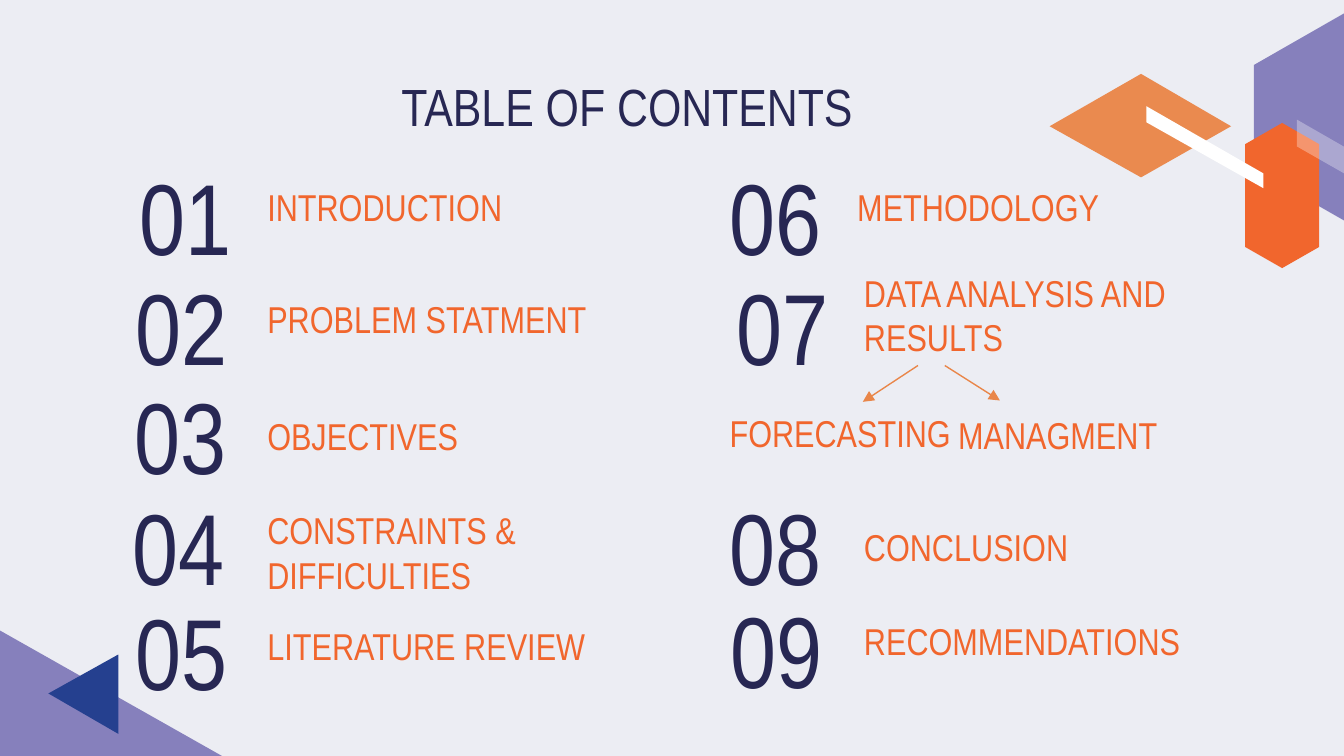
"""Build the table of contents slide with its numbered topics and corner shapes."""
from dataclasses import dataclass

from lxml import etree
from pptx import Presentation
from pptx.dml.color import RGBColor
from pptx.enum.shapes import MSO_CONNECTOR, MSO_SHAPE
from pptx.enum.text import MSO_ANCHOR, MSO_AUTO_SIZE, PP_ALIGN
from pptx.oxml.ns import qn
from pptx.util import Inches, Pt

HEX = MSO_SHAPE.HEXAGON
LINE = MSO_CONNECTOR.STRAIGHT
TOP, MID = MSO_ANCHOR.TOP, MSO_ANCHOR.MIDDLE
LEFT, MIDST = PP_ALIGN.LEFT, PP_ALIGN.CENTER
FIXED = MSO_AUTO_SIZE.NONE
FONT = "Arial Narrow"
COLORS = {
    "paper": "ECEDF3", "navy": "272753", "orange": "F1662D", "peach": "EA8A4F",
    "arrow": "E98649", "violet": "8680BC", "blue": "25408F", "white": "FFFFFF",
}


@dataclass
class Label:
    text: str
    x: float
    y: float
    tall: float = 0.32


@dataclass
class Patch:
    points: list[tuple[float, float]]
    color: str
    alpha: int = 100


@dataclass
class Block:
    x: float
    y: float
    wide: float
    tall: float
    color: str


@dataclass
class Arrow:
    x: float
    y: float
    to_x: float
    to_y: float


NUMBERS = [
    Label("01", 0.94, 1.09), Label("02", 0.91, 1.91), Label("03", 0.9, 2.72),
    Label("04", 0.89, 3.55), Label("05", 0.91, 4.33), Label("06", 5.33, 1.09),
    Label("07", 5.38, 1.91), Label("08", 5.33, 3.55), Label("09", 5.34, 4.31),
]
TOPICS = [
    Label("INTRODUCTION", 1.89, 1.38),
    Label("PROBLEM STATMENT", 1.89, 2.21),
    Label("OBJECTIVES", 1.89, 3.08),
    Label("CONSTRAINTS & DIFFICULTIES", 1.89, 3.79, 0.63),
    Label("LITERATURE REVIEW", 1.89, 4.64),
    Label("METHODOLOGY", 6.28, 1.38),
    Label("DATA ANALYSIS AND RESULTS", 6.33, 2.18),
    Label("FORECASTING", 5.33, 3.06),
    Label("MANAGMENT", 7.03, 3.07),
    Label("CONCLUSION", 6.33, 3.91),
    Label("RECOMMENDATIONS", 6.33, 4.61),
]
DECOR = [
    Block(9.23, 0.2, 1.54, 1.34, "violet"),
    Patch([(8.49, 0.55), (9.16, 0.94), (8.49, 1.32), (7.81, 0.94)], "peach"),
    Patch([(-0.02, 4.68), (-1.69, 5.63), (-0.02, 6.59), (1.66, 5.63)], "violet"),
    Patch([(0.88, 4.87), (0.36, 5.16), (0.88, 5.46)], "blue"),
    Block(9, 1.18, 1.08, 0.55, "orange"),
    Patch([(9.4, 1.29), (8.53, 0.79), (8.53, 0.91), (9.4, 1.4)], "white"),
    Patch([(11.13, 1.74), (9.65, 0.89), (9.65, 1.09), (11.14, 1.94)], "white", 31),
]
ARROWS = [Arrow(6.83, 2.72, 6.42, 2.99), Arrow(7.03, 2.72, 7.44, 2.98)]


def tint(name: str) -> RGBColor:
    return RGBColor.from_string(COLORS[name])


def paint(shape, color: str) -> None:
    shape.shadow.inherit = False
    shape.fill.solid()
    shape.fill.fore_color.rgb = tint(color)
    shape.line.fill.background()


def draw_block(slide, block: Block) -> None:
    shape = slide.shapes.add_shape(
        HEX, Inches(block.x), Inches(block.y), Inches(block.wide), Inches(block.tall))
    shape.adjustments[0] = 0.286
    shape.rotation = 270
    paint(shape, block.color)


def draw_patch(slide, patch: Patch) -> None:
    spots = [(Inches(x), Inches(y)) for x, y in patch.points]
    pen = slide.shapes.build_freeform(*spots[0])
    pen.add_line_segments(spots[1:], close=True)
    shape = pen.convert_to_shape()
    paint(shape, patch.color)
    if patch.alpha < 100:
        fill = shape.element.spPr.find(qn("a:solidFill"))
        etree.SubElement(fill[0], qn("a:alpha"), val=str(patch.alpha * 1000))


def style(frame, text: str, size: int, color: str, anchor=MID, align=LEFT) -> None:
    frame.text = text
    frame.word_wrap = True
    frame.auto_size = FIXED
    frame.vertical_anchor = anchor
    frame.margin_left = frame.margin_right = Inches(0.1)
    frame.margin_top = frame.margin_bottom = Inches(0.1)
    line = frame.paragraphs[0]
    line.alignment = align
    font = line.runs[0].font
    font.name, font.size = FONT, Pt(size)
    font.color.rgb = tint(color)


def draw_label(slide, label: Label, wide: float, tall: float, size: int, color: str) -> None:
    box = slide.shapes.add_textbox(
        Inches(label.x), Inches(label.y), Inches(wide), Inches(tall))
    style(box.text_frame, label.text, size, color)


def draw_arrow(slide, arrow: Arrow) -> None:
    line = slide.shapes.add_connector(
        LINE, Inches(arrow.x), Inches(arrow.y), Inches(arrow.to_x), Inches(arrow.to_y))
    line.line.width = Pt(0.75)
    line.line.color.rgb = tint("arrow")
    props = line.element.spPr
    etree.SubElement(props.find(qn("a:ln")), qn("a:tailEnd"), type="triangle")
    etree.SubElement(props, qn("a:effectLst"))


def main() -> None:
    deck = Presentation()
    deck.slide_width = Inches(10)
    deck.slide_height = Inches(10 * 9 / 16)
    slide = deck.slides.add_slide(deck.slide_layouts[5])
    back = slide.background.fill
    back.solid()
    back.fore_color.rgb = tint("paper")

    title = slide.shapes.title
    title.left, title.top = Inches(0.94), Inches(0.45)
    title.width, title.height = Inches(7.45), Inches(0.63)
    style(title.text_frame, "TABLE OF CONTENTS", 28, "navy", TOP, MIDST)

    for part in DECOR:
        if isinstance(part, Block):
            draw_block(slide, part)
        else:
            draw_patch(slide, part)
    for label in NUMBERS:
        draw_label(slide, label, 1.33, 1.02, 54, "navy")
    for label in TOPICS:
        draw_label(slide, label, 2.65, label.tall, 20, "orange")
    for arrow in ARROWS:
        draw_arrow(slide, arrow)
    deck.save("out.pptx")


if __name__ == "__main__":
    main()
